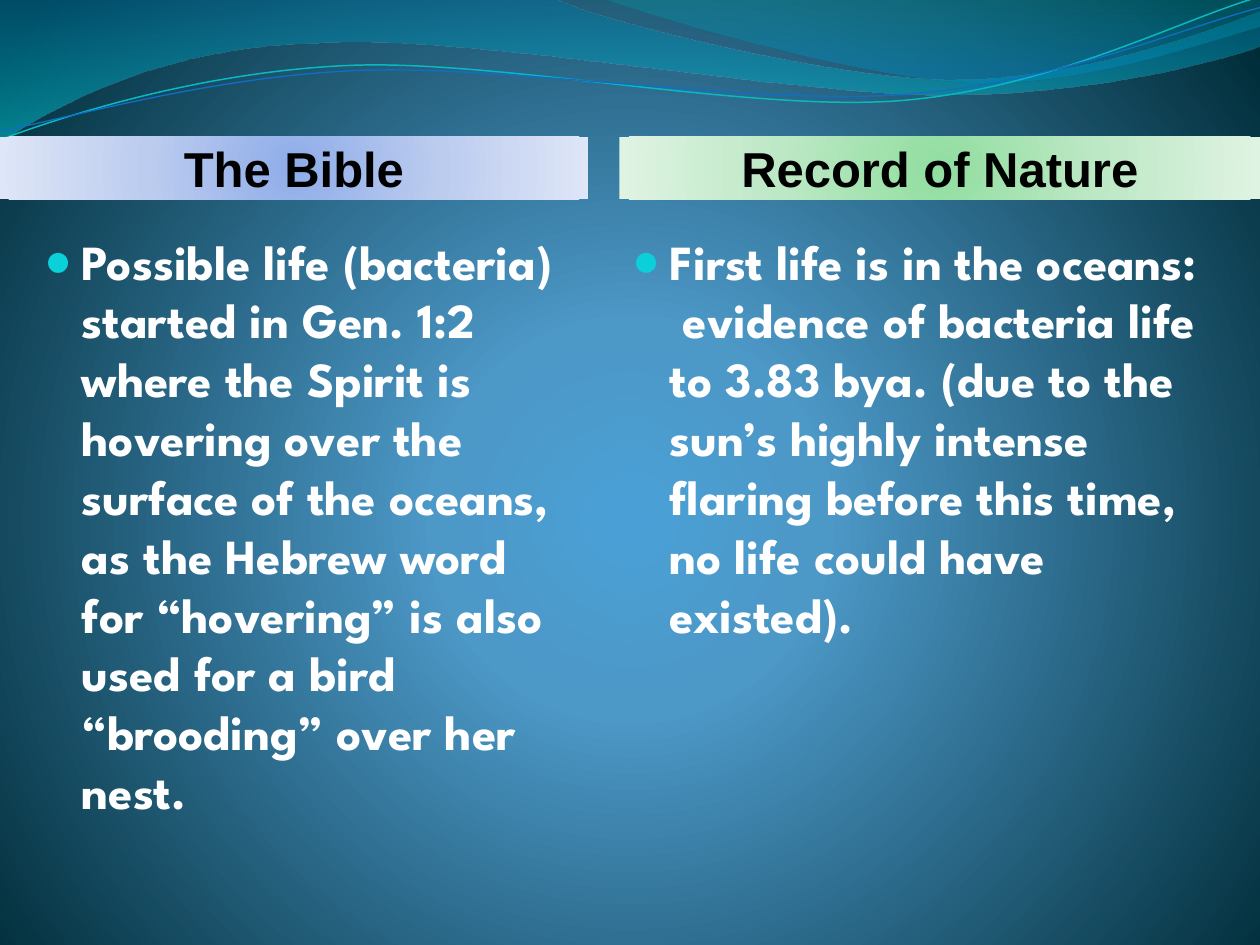
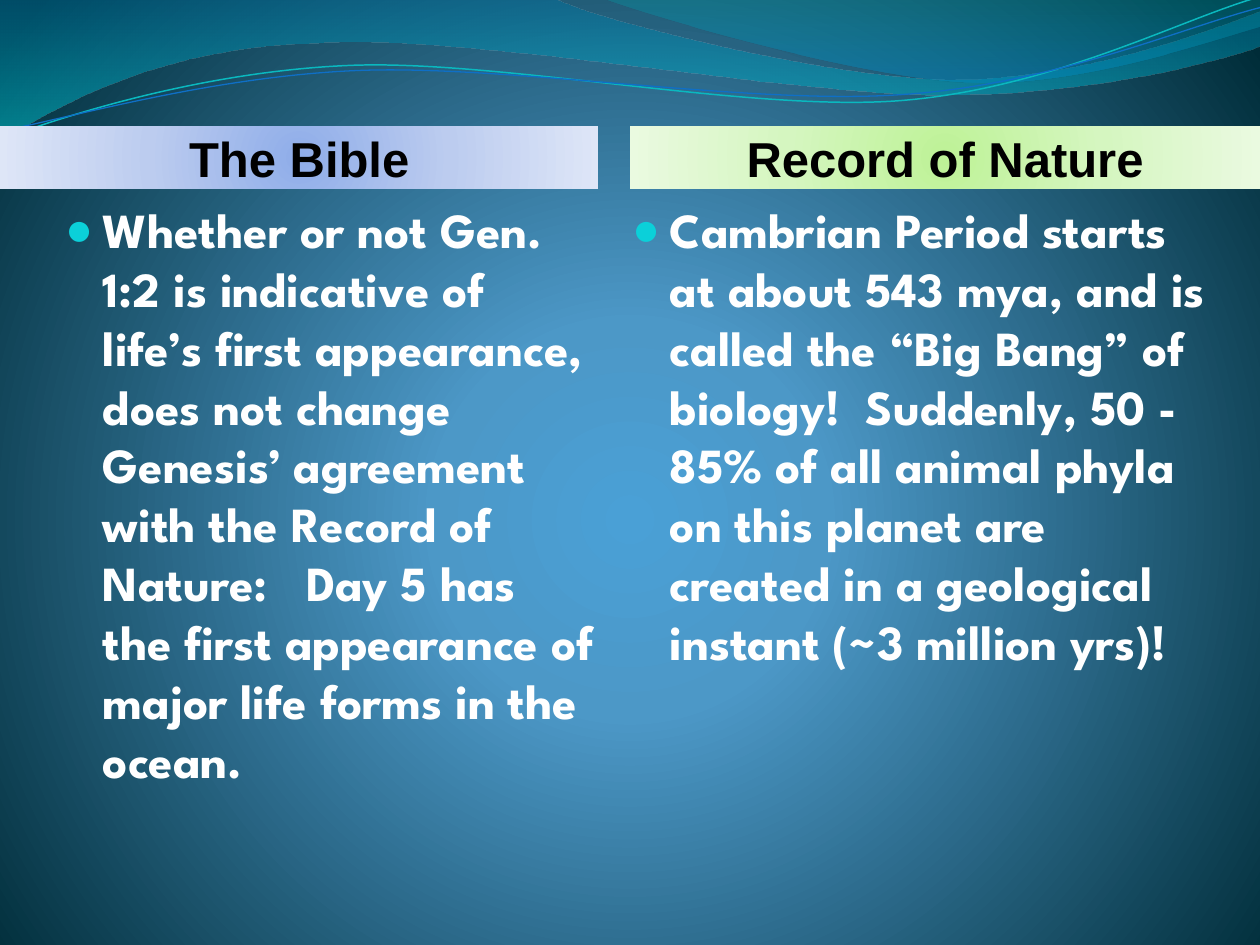
from math import cos, radians, sin

from lxml.etree import SubElement
from pptx import Presentation
from pptx.dml.color import RGBColor
from pptx.enum.text import MSO_ANCHOR, MSO_AUTO_SIZE, PP_ALIGN
from pptx.oxml import parse_xml
from pptx.oxml.ns import nsdecls, qn
from pptx.util import Inches, Pt

COMPARISON = 4
GRID = Inches(1) // 12
LINE_TILT = 357.3
BULLET = "0BD0D9"
BACKGROUND = [(0, "4AA0D6"), (25, "4C98C7"), (100, "002C38")]
BLUE = [(0, "8FADE9"), (50, "BCCCEF"), (100, "DEE6F7")]
GREEN = [(0, "91DEA0"), (50, "BDE8C5"), (100, "DFF3E3")]
LIME = [(0, "BEF297"), (50, "D5F6C0"), (100, "EAFAE0")]
HEADING_FONT = {"name": "Arial", "size": Pt(28), "bold": True}
BODY_FONT = {"name": "League Spartan", "size": Pt(28), "bold": True}
HEADING_FRAME = {
    "margin_left": Inches(0.05), "margin_right": Inches(0.05),
    "margin_top": 0, "margin_bottom": 0,
    "vertical_anchor": MSO_ANCHOR.MIDDLE,
}
BODY_FRAME = {
    "margin_left": Inches(0.1), "margin_right": Inches(0.1),
    "margin_top": 0, "margin_bottom": Inches(0.05),
    "vertical_anchor": MSO_ANCHOR.TOP,
}

# Each path is a start point, then lines (x, y) and cubic curves (six numbers),
# in inches on the slide.
BROAD_WAVE = [
    (0, 0), (4.4, -0.01), (4.76, 0.17, 6.64, 0.63, 7.58, 0.63),
    (8.53, 0.63, 9.58, 0.26, 10, 0.09), (10.01, 0.36),
    (9.83, 0.44, 8.7, 0.76, 7.46, 0.75), (6.22, 0.75, 3.82, 0.28, 2.57, 0.34),
    (1.29, 0.36, 0.46, 0.83, -0.01, 1.13), (0, 0),
]
CORNER_WAVE = [
    (4.79, -0.01), (5.09, 0.11, 6.82, 0.62, 7.69, 0.65),
    (8.56, 0.69, 9.61, 0.32, 10, 0.21), (10, 0), (4.79, -0.01),
]
TEAL_LINE = [
    (0, 1.11), (0.48, 0.93, 1.58, 0.57, 2.77, 0.52),
    (3.95, 0.47, 5.93, 0.89, 7.13, 0.8), (8.33, 0.71, 9.38, 0.15, 9.98, -0.02),
]
BLUE_LINE = [
    (0, 1.04), (0.47, 0.96, 1.64, 0.61, 2.83, 0.56),
    (4.03, 0.51, 5.97, 0.84, 7.17, 0.75), (8.36, 0.67, 9.41, 0.21, 10, 0.06),
]

# Boxes are left, top, width and height in grid units of a twelfth of an inch.
SLIDES = [
    {
        "headings": [("The Bible", BLUE, (0, 13, 56, 6)),
                     ("Record of Nature", GREEN, (59, 13, 61, 6))],
        "passages": [
            ("Possible life (bacteria) started in Gen. 1:2 where the Spirit is "
             "hovering over the surface of the oceans, as the Hebrew word for "
             "“hovering” is also used for a bird “brooding” over her nest.",
             (3, 22, 53, 66)),
            ("First life is in the oceans:  evidence of bacteria life to 3.83 "
             "bya. (due to the sun’s highly intense flaring before this time, "
             "no life could have existed).",
             (59, 22, 57, 28)),
        ],
    },
    {
        "headings": [("The Bible", BLUE, (0, 12, 57, 6)),
                     ("Record of Nature", LIME, (60, 12, 60, 6))],
        "passages": [
            ("Whether or not Gen. 1:2 is indicative of life’s first appearance, "
             "does not change Genesis’ agreement with the Record of Nature:   "
             "Day 5 has the first appearance of major life forms in the ocean.",
             (5, 19, 53, 64)),
            ("Cambrian Period starts at about 543 mya, and is called the “Big "
             "Bang” of biology!  Suddenly, 50 - 85% of all animal phyla on this "
             "planet are created in a geological instant (~3 million yrs)!",
             (59, 19, 57, 66)),
        ],
    },
]


def rgb(value):
    return RGBColor.from_string(value)


def set_attrs(target, values):
    for name, value in values.items():
        setattr(target, name, value)


def set_gradient(fill, holder, stops, focus=None):
    """Fill with (position, colour[, opacity]) stops: circular round focus, else downward."""
    fill.solid()
    gs = ""
    for pos, color, *opacity in stops:
        alpha = "".join(f'<a:alpha val="{o * 1000}"/>' for o in opacity)
        gs += (f'<a:gs pos="{pos * 1000}"><a:srgbClr val="{color}">{alpha}'
               "</a:srgbClr></a:gs>")
    if focus:
        sides = " ".join(f'{s}="{v * 1000}"' for s, v in zip("ltrb", focus))
        shade = f'<a:path path="circle"><a:fillToRect {sides}/></a:path>'
    else:
        shade = '<a:lin ang="5400000" scaled="0"/>'
    grad = parse_xml(f'<a:gradFill {nsdecls("a")} rotWithShape="1">'
                     f"<a:gsLst>{gs}</a:gsLst>{shade}</a:gradFill>")
    holder.replace(holder.find(qn("a:solidFill")), grad)


def to_frame(point, box, rotation):
    """Turn a slide point into a point of the unrotated box, in EMU."""
    left, top, width, height = box
    dx, dy = point[0] - left - width / 2, point[1] - top - height / 2
    angle = radians(-rotation)
    return (Inches(dx * cos(angle) - dy * sin(angle) + width / 2),
            Inches(dx * sin(angle) + dy * cos(angle) + height / 2))


def add_path(slide, path, box, rotation=0, close=False):
    """Add a freeform through the ends of the segments, then bend its curves."""
    ends = [(Inches(s[-2]), Inches(s[-1])) for s in path]
    builder = slide.shapes.build_freeform(*ends[0])
    builder.add_line_segments(ends[1:], close=False)
    sp = builder.convert_to_shape()
    sp.left, sp.top, sp.width, sp.height = map(Inches, box)
    sp.rotation = rotation
    sp.shadow.inherit = False

    outline = sp.element.find(".//" + qn("a:path"))
    for command in list(outline):
        outline.remove(command)
    outline.set("w", str(sp.width))
    outline.set("h", str(sp.height))
    for i, segment in enumerate(path):
        tag = "a:moveTo" if i == 0 else "a:lnTo" if len(segment) == 2 else "a:cubicBezTo"
        command = SubElement(outline, qn(tag))
        for point in zip(segment[::2], segment[1::2]):
            x, y = to_frame(point, box, rotation)
            SubElement(command, qn("a:pt"), x=str(x), y=str(y))
    if close:
        SubElement(outline, qn("a:close"))
    return sp


def add_wave(slide, path, box, stops):
    sp = add_path(slide, path, box, close=True)
    sp.line.fill.background()
    set_gradient(sp.fill, sp.element.spPr, stops)
    return sp


def add_wave_line(slide, path, box, color, width):
    sp = add_path(slide, path, box, LINE_TILT)
    sp.fill.background()
    sp.line.color.rgb = rgb(color)
    sp.line.width = Pt(width)
    return sp


def decorate_master(master, slide):
    """Give the master its background and waves; the waves are drawn on slide, then moved."""
    fill = master.background.fill
    fill.solid()
    bg = master.element.find(".//" + qn("p:bgPr"))
    set_gradient(fill, bg, BACKGROUND, (10, 110, 10, 100))
    waves = [
        add_wave(slide, BROAD_WAVE, (-0.01, -0.01, 10.02, 1.14),
                 [(0, "0074A1", 45), (100, "00C6CF", 55)]),
        add_wave(slide, CORNER_WAVE, (4.79, -0.01, 5.21, 0.7),
                 [(0, "00A1A9", 30), (80, "008BBF", 45)]),
        add_wave_line(slide, TEAL_LINE, (-0.02, 0.22, 10.02, 0.71), "0AB8BF", 0.85),
        add_wave_line(slide, BLUE_LINE, (-0.02, 0.3, 10.03, 0.58), "0F6FC6", 0.75),
    ]
    for sp in waves:
        master.shapes.element.append(sp.element)


def fill_placeholder(sp, text, box, frame, font, color):
    sp.left, sp.top, sp.width, sp.height = (units * GRID for units in box)
    tf = sp.text_frame
    set_attrs(tf, {**frame, "word_wrap": True, "auto_size": MSO_AUTO_SIZE.NONE})
    p = tf.paragraphs[0]
    r = p.add_run()
    r.text = text
    set_attrs(r.font, font)
    r.font.color.rgb = rgb(color)
    return p


def set_heading(sp, text, stops, box):
    p = fill_placeholder(sp, text, box, HEADING_FRAME, HEADING_FONT, "000000")
    p.alignment = PP_ALIGN.CENTER
    set_gradient(sp.fill, sp.element.spPr, stops, (50, 50, 50, 50))


def set_passage(sp, text, box):
    p = fill_placeholder(sp, text, box, BODY_FRAME, BODY_FONT, "FFFFFF")
    pPr = p._p.get_or_add_pPr()
    pPr.set("marL", str(Inches(0.3)))
    pPr.set("indent", str(-Inches(0.3)))
    for bullet in (f'<a:buClr {nsdecls("a")}><a:srgbClr val="{BULLET}"/></a:buClr>',
                   f'<a:buSzPct {nsdecls("a")} val="95000"/>',
                   f'<a:buFont {nsdecls("a")} typeface="Arial"/>',
                   f'<a:buChar {nsdecls("a")} char="●"/>'):
        pPr.append(parse_xml(bullet))


def add_comparison(prs, headings, passages):
    slide = prs.slides.add_slide(prs.slide_layouts[COMPARISON])
    title = slide.shapes.title.element
    title.getparent().remove(title)
    holders = {sp.placeholder_format.idx: sp for sp in slide.placeholders}
    for idx, heading in zip((1, 3), headings):
        set_heading(holders[idx], *heading)
    for idx, passage in zip((2, 4), passages):
        set_passage(holders[idx], *passage)
    return slide


def main():
    prs = Presentation()
    prs.slide_width, prs.slide_height = Inches(10), Inches(7.5)
    slides = [add_comparison(prs, **content) for content in SLIDES]
    decorate_master(prs.slide_master, slides[0])
    prs.save("out.pptx")


if __name__ == "__main__":
    main()
